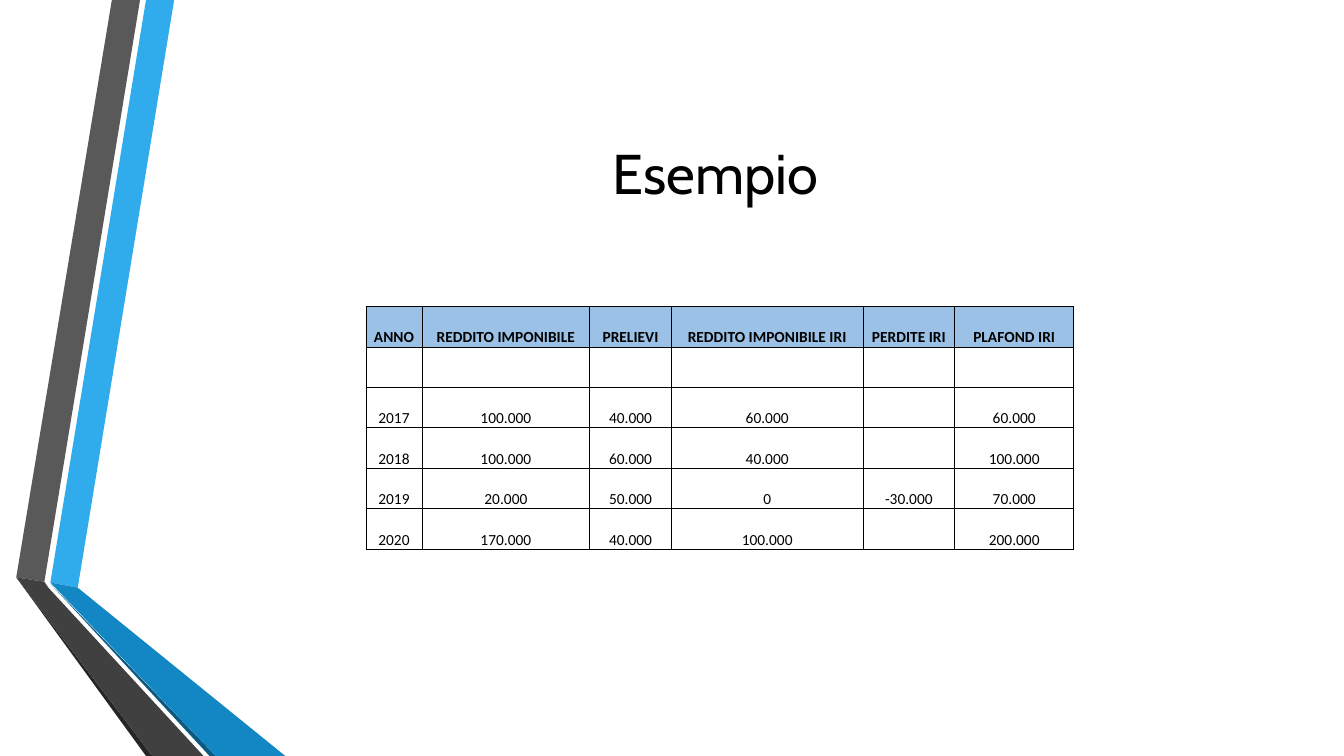
from lxml.etree import SubElement
from pptx import Presentation
from pptx.dml.color import RGBColor
from pptx.enum.text import MSO_ANCHOR, PP_ALIGN
from pptx.oxml.ns import qn
from pptx.util import Cm, Pt

BLACK, HEADER_BLUE = "000000", "9BC2E6"
NO_STYLE = "{2D5ABB26-0587-4C30-8999-92F81FD0307C}"

# Ribbon outlines in cm from the top left of their box, back to front
RIBBONS = [
    ("30ACEC", [(0.86, 14.68), (1.55, 14.81), (3.98, 0), (3.27, 0)]),
    ("595959", [(3.12, 0), (2.41, 0), (0, 14.55), (0.71, 14.66)]),
    ("262626", [(0, 14.55), (3.27, 19.05), (3.43, 19.05)]),
    ("0C5A82", [(0.86, 14.71), (4.87, 19.05), (5.03, 19.05)]),
    ("1287C3", [(0.86, 14.68), (5.03, 19.05), (6.78, 19.05), (1.55, 14.81)]),
    ("404040", [(4.72, 19.05), (0.81, 14.81), (0.71, 14.66), (0, 14.55),
                (3.43, 19.05)]),
]

# The grid of values sits inside a frame of empty, unlined cells
COL_WIDTHS = [1.19, 1.42, 4.22, 2.06, 4.83, 2.31, 3, 1.96]
ROW_HEIGHTS = [0.94] + [1.02] * 7
VALUES = [
    ["ANNO", "REDDITO IMPONIBILE", "PRELIEVI", "REDDITO IMPONIBILE IRI",
     "PERDITE IRI", "PLAFOND IRI"],
    [""] * 6,
    ["2017", "100.000", "40.000", "60.000", "", "60.000"],
    ["2018", "100.000", "60.000", "40.000", "", "100.000"],
    ["2019", "20.000", "50.000", "0", "-30.000", "70.000"],
    ["2020", "170.000", "40.000", "100.000", "", "200.000"],
]
SIDES = {"a:lnL": (0, -1), "a:lnR": (0, 1), "a:lnT": (-1, 0), "a:lnB": (1, 0)}


def color(value):
    return RGBColor.from_string(value)


def write(p, text, **font):
    p.alignment = PP_ALIGN.CENTER
    r = p.add_run()
    r.text = text
    r.font.color.rgb = color(BLACK)
    for name, value in font.items():
        setattr(r.font, name, value)


def add_ribbons(s, left, top):
    for fill, points in RIBBONS:
        outline = [(Cm(left + x), Cm(top + y)) for x, y in points]
        builder = s.shapes.build_freeform(*outline[0])
        builder.add_line_segments(outline[1:], close=True)
        sp = builder.convert_to_shape()
        sp.shadow.inherit = False
        sp.fill.solid()
        sp.fill.fore_color.rgb = color(fill)
        sp.line.fill.background()


def add_title(s, left, top, width, height):
    sp = s.shapes.title
    box = {"left": left, "top": top, "width": width, "height": height}
    for name, value in box.items():
        setattr(sp, name, Cm(value))
    tf = sp.text_frame
    tf.word_wrap = True
    tf.vertical_anchor = MSO_ANCHOR.MIDDLE
    write(tf.paragraphs[0], "Esempio", name="Cabin", size=Pt(40))


def in_grid(row, col):
    return 1 <= row <= len(VALUES) and 1 <= col <= len(VALUES[0])


def add_borders(cell, row, col):
    """Line every side that touches the grid of values."""
    tc_pr = cell._tc.get_or_add_tcPr()
    for side, (down, right) in SIDES.items():
        if in_grid(row, col) or in_grid(row + down, col + right):
            ln = SubElement(tc_pr, qn(side), w=str(Pt(0.5)))
            fill = SubElement(ln, qn("a:solidFill"))
            SubElement(fill, qn("a:srgbClr"), val=BLACK)


def add_income_table(s, left, top):
    frame = s.shapes.add_table(
        len(ROW_HEIGHTS), len(COL_WIDTHS), Cm(left), Cm(top),
        Cm(sum(COL_WIDTHS)), Cm(sum(ROW_HEIGHTS)))
    table = frame.table
    table.first_row = table.horz_banding = False
    table._tbl.tblPr.find(qn("a:tableStyleId")).text = NO_STYLE
    for column, width in zip(table.columns, COL_WIDTHS):
        column.width = Cm(width)
    for row, height in zip(table.rows, ROW_HEIGHTS):
        row.height = Cm(height)

    cell_format = {"margin_left": Cm(0.02), "margin_right": Cm(0.02),
                   "margin_top": Cm(0.02), "margin_bottom": 0,
                   "vertical_anchor": MSO_ANCHOR.BOTTOM}
    for i in range(len(ROW_HEIGHTS)):
        for j in range(len(COL_WIDTHS)):
            cell = table.cell(i, j)
            for name, value in cell_format.items():
                setattr(cell, name, value)
            add_borders(cell, i, j)
            is_header = i == 1 and in_grid(i, j)
            if is_header:
                cell.fill.solid()
                cell.fill.fore_color.rgb = color(HEADER_BLUE)
            else:
                cell.fill.background()
            if in_grid(i, j) and VALUES[i - 1][j - 1]:
                write(cell.text_frame.paragraphs[0], VALUES[i - 1][j - 1],
                      name="Calibri", size=Pt(11), bold=is_header)


def main():
    prs = Presentation()
    prs.slide_width, prs.slide_height = Cm(33.87), Cm(19.05)
    s = prs.slides.add_slide(prs.slide_layouts[5])
    add_ribbons(s, 0.41, 0)
    add_title(s, 4.11, 1.9, 27.84, 4.88)
    add_income_table(s, 8.03, 6.78)
    prs.save("out.pptx")


if __name__ == "__main__":
    main()
